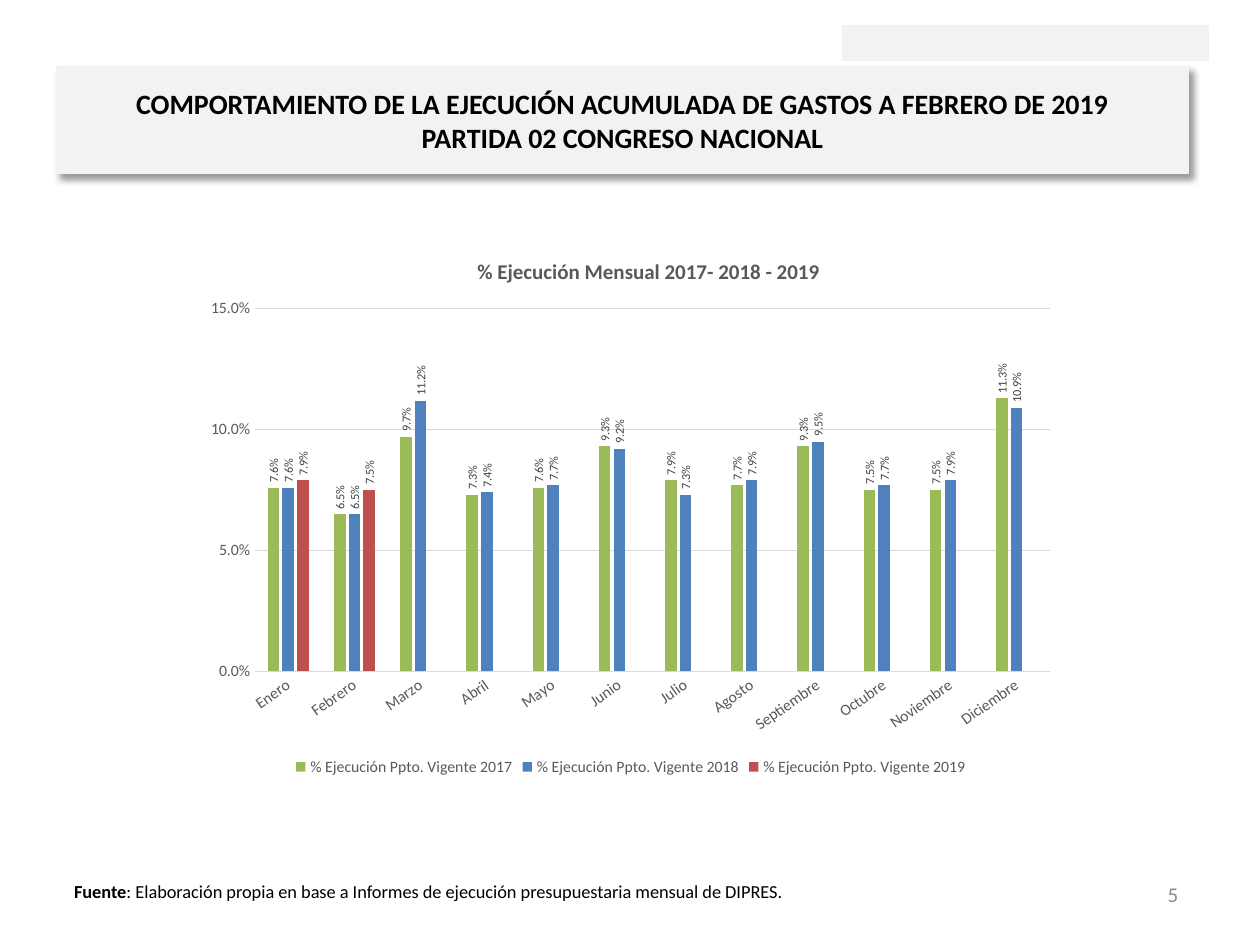
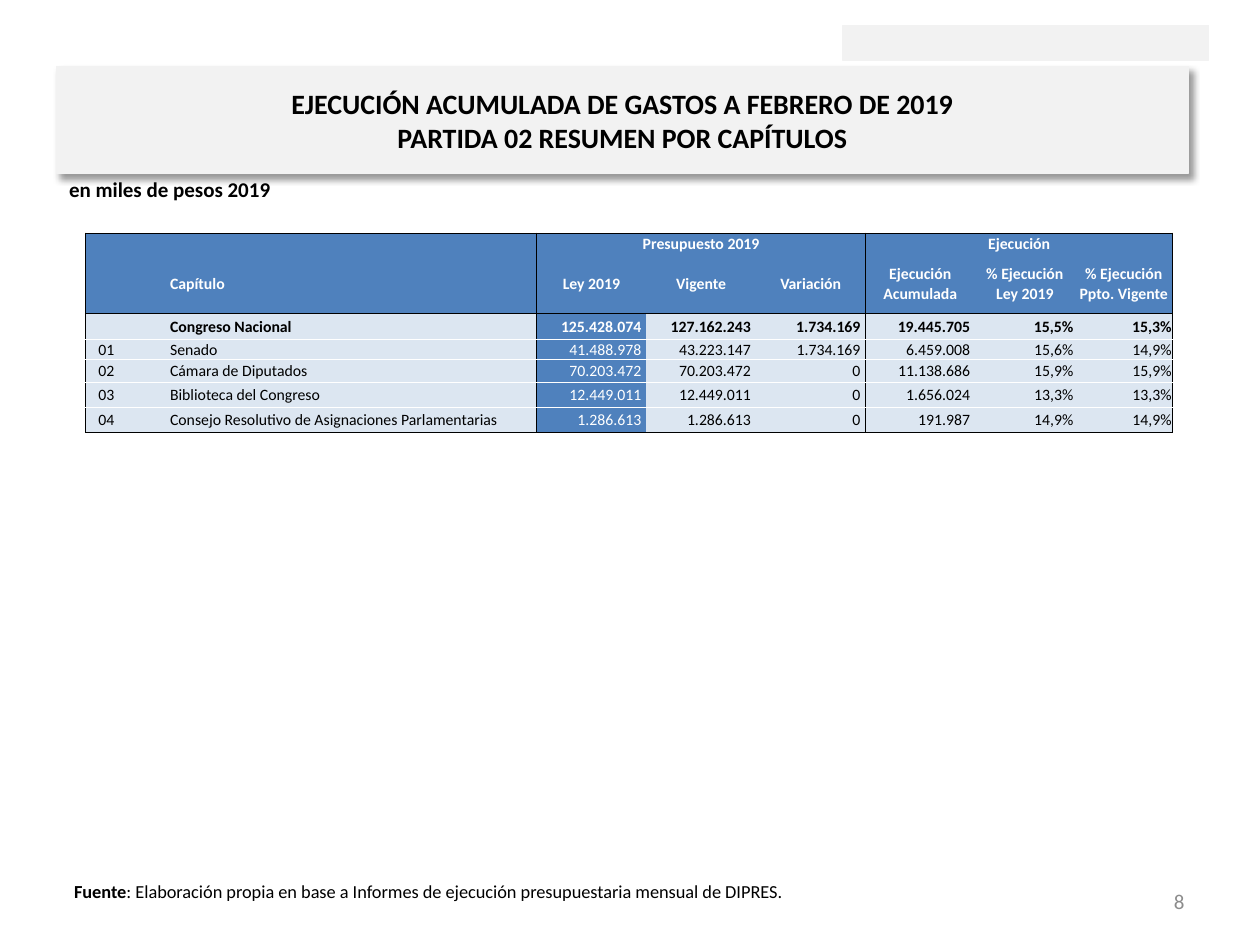
"""Build the two budget execution slides: monthly chart and chapter table."""
from lxml.etree import SubElement as Sub
from pptx import Presentation
from pptx.chart.data import CategoryChartData as ChartData
from pptx.dml.color import RGBColor
from pptx.enum.chart import XL_CHART_TYPE as Kind, XL_LABEL_POSITION as Spot
from pptx.enum.chart import XL_LEGEND_POSITION as Side, XL_TICK_MARK as Tick
from pptx.enum.shapes import MSO_SHAPE as Shape
from pptx.enum.text import MSO_ANCHOR as Anchor, PP_ALIGN as Align
from pptx.oxml import parse_xml
from pptx.oxml.ns import nsdecls, qn
from pptx.util import Inches, Pt

FONT = "Calibri"
BLACK, WHITE, GREY, RULE = "000000", "FFFFFF", "595959", "D9D9D9"
BAND, BLUE, PALE, PAGE = "F2F2F2", "4F81BD", "DCE6F1", "8C8C8C"

SOURCE = ("Fuente", ": Elaboración propia en base a Informes de ejecución "
          "presupuestaria mensual de DIPRES.")

TREND = ("COMPORTAMIENTO DE LA EJECUCIÓN ACUMULADA DE GASTOS A FEBRERO DE 2019",
         "PARTIDA 02 CONGRESO NACIONAL")
TITLE = "% Ejecución Mensual 2017- 2018 - 2019"
MONTHS = ["Enero", "Febrero", "Marzo", "Abril", "Mayo", "Junio", "Julio",
          "Agosto", "Septiembre", "Octubre", "Noviembre", "Diciembre"]
YEARS = [
    (2017, "9BBB59", [.076, .065, .097, .073, .076, .093, .079, .077, .093, .075, .075, .113]),
    (2018, BLUE, [.076, .065, .112, .074, .077, .092, .073, .079, .095, .077, .079, .109]),
    (2019, "C0504D", [.079, .075]),
]

RECAP = ("EJECUCIÓN ACUMULADA DE GASTOS A FEBRERO DE 2019",
         "PARTIDA 02 RESUMEN POR CAPÍTULOS")
UNITS = "en miles de pesos 2019"
WIDTHS = [.33, .33, 2.92, .87, .87, .87, .87, .79, .78]
HEIGHTS = [.16, .48, .2, .16, .18, .2, .2]
ROWS = [
    ("", "", "", "Presupuesto 2019", "", "", "Ejecución", "", ""),
    ("", "", "Capítulo", "Ley 2019", "Vigente", "Variación",
     "Ejecución Acumulada", "% Ejecución Ley 2019", "% Ejecución Ppto. Vigente"),
    ("", "", "Congreso Nacional", "125.428.074", "127.162.243", "1.734.169",
     "19.445.705", "15,5%", "15,3%"),
    ("01", "", "Senado", "41.488.978", "43.223.147", "1.734.169",
     "6.459.008", "15,6%", "14,9%"),
    ("02", "", "Cámara de Diputados", "70.203.472", "70.203.472", "0",
     "11.138.686", "15,9%", "15,9%"),
    ("03", "", "Biblioteca del Congreso", "12.449.011", "12.449.011", "0",
     "1.656.024", "13,3%", "13,3%"),
    ("04", "", "Consejo Resolutivo de Asignaciones Parlamentarias", "1.286.613",
     "1.286.613", "0", "191.987", "14,9%", "14,9%"),
]


def rgb(code):
    return RGBColor.from_string(code)


def style(font, size, color=BLACK, bold=False):
    font.name, font.size, font.bold = FONT, Pt(size), bold
    font.color.rgb = rgb(color)


def paint(part, color):
    part.fill.solid()
    part.fill.fore_color.rgb = rgb(color)


def stroke(line, color):
    line.color.rgb = rgb(color)
    line.width = Pt(.75)


def box(slide, area, text="", size=12, color=BLACK, bold=False, align=Align.LEFT,
        anchor=Anchor.TOP):
    frame = slide.shapes.add_textbox(*map(Inches, area)).text_frame
    frame.word_wrap, frame.vertical_anchor = True, anchor
    par = frame.paragraphs[0]
    par.alignment = align
    if text:
        par.text = text
        style(par.font, size, color, bold)
    return par


def block(slide, area):
    shape = slide.shapes.add_shape(Shape.RECTANGLE, *map(Inches, area))
    paint(shape, BAND)
    stroke(shape.line, BAND)
    shape.shadow.inherit = False
    return shape


def banner(slide, lines):
    band = block(slide, (.45, .53, 8.98, .85))
    glow = Sub(band.element.spPr.find(qn("a:effectLst")), qn("a:outerShdw"),
               blurRad=str(Pt(4)), dist=str(Pt(3)), dir="2700000", algn="tl", rotWithShape="0")
    Sub(Sub(glow, qn("a:srgbClr"), val=BLACK), qn("a:alpha"), val="40000")
    frame = band.text_frame
    frame.word_wrap, frame.vertical_anchor = True, Anchor.MIDDLE
    par = frame.paragraphs[0]
    par.alignment = Align.CENTER
    par.add_run().text = lines[0]
    par.add_line_break()
    par.add_run().text = lines[1]
    style(par.font, 16, BLACK, True)


def start(deck, lines, page, spot):
    slide = deck.slides.add_slide(deck.slide_layouts[6])
    block(slide, (6.69, .2, 2.9, .28))
    banner(slide, lines)
    foot = box(slide, (.49, 6.94, 9, .4))
    for text, bold in zip(SOURCE, (True, False)):
        run = foot.add_run()
        run.text = text
        style(run.font, 10.5, BLACK, bold)
    box(slide, (*spot, 2.33, .4), page, 12, PAGE, align=Align.RIGHT, anchor=Anchor.MIDDLE)
    return slide


def place(node, index, target, **spots):
    for old in node.findall(qn("c:layout")):
        node.remove(old)
    inner = '<c:layoutTarget val="inner"/>' if target else ""
    modes = "".join(f'<c:{k}Mode val="edge"/>' for k in "xy")
    vals = "".join(f'<c:{k} val="{v}"/>' for k, v in spots.items())
    node.insert(index, parse_xml(
        f'<c:layout {nsdecls("c")}><c:manualLayout>{inner}{modes}{vals}'
        '</c:manualLayout></c:layout>'))


def draw_chart(slide):
    data = ChartData(number_format="0.0%")
    data.categories = MONTHS
    for year, _, vals in YEARS:
        data.add_series(f"% Ejecución Ppto. Vigente {year}",
                        vals + [None] * (len(MONTHS) - len(vals)))
    chart = slide.shapes.add_chart(
        Kind.COLUMN_CLUSTERED, *map(Inches, (1.54, 1.84, 6.93, 4.36)), data).chart
    style(chart.font, 10)
    chart.has_title = True
    head = chart.chart_title.text_frame
    head.text = TITLE
    style(head.paragraphs[0].runs[0].font, 12, GREY, True)
    chart.has_legend = True
    chart.legend.position, chart.legend.include_in_layout = Side.BOTTOM, False
    style(chart.legend.font, 9, GREY)

    for axis in (chart.category_axis, chart.value_axis):
        axis.major_tick_mark = axis.minor_tick_mark = Tick.NONE
        style(axis.tick_labels.font, 9, GREY)
    stroke(chart.category_axis.format.line, RULE)
    axis = chart.value_axis
    axis.minimum_scale, axis.maximum_scale, axis.major_unit = 0, .15, .05
    axis.format.line.fill.background()
    stroke(axis.major_gridlines.format.line, RULE)
    axis.tick_labels.number_format = "0.0%"
    axis.tick_labels.number_format_is_linked = False

    plot = chart.plots[0]
    plot.gap_width, plot.overlap, plot.vary_by_categories = 219, -27, False
    for series, (_, color, _) in zip(plot.series, YEARS):
        paint(series.format, color)
        tags = series.data_labels
        tags.show_value, tags.position = True, Spot.OUTSIDE_END
        tags.number_format, tags.number_format_is_linked = "0.0%", False
        style(tags.font, 7, "404040")
    for owner, angle in (("dLbls", -90), ("catAx", -35)):
        for body in chart.element.xpath(f".//c:{owner}/c:txPr/a:bodyPr"):
            body.set("rot", str(angle * 60000))
            body.set("vert", "horz")
    place(chart.element.xpath("c:chart/c:title")[0], 1, False, x=.32, y=.04)
    place(chart.element.xpath("c:chart/c:plotArea")[0], 0, True, x=.07, y=.14, w=.91, h=.66)


def edge(cell, side, color):
    line = Sub(cell._tc.get_or_add_tcPr(), qn(f"a:ln{side}"), w=str(Pt(.5)))
    if color:
        Sub(Sub(line, qn("a:solidFill")), qn("a:srgbClr"), val=color)
    else:
        Sub(line, qn("a:noFill"))


def frame_cell(cell, row, col):
    last = len(ROWS) - 1
    merged = row == 0 and col in (3, 6)
    edge(cell, "L", BLACK if col % 3 == 0 else None)
    edge(cell, "R", BLACK if col % 3 == 2 or merged else None)
    edge(cell, "T", BLACK if row in (0, 2) else WHITE if row > 2 else None)
    edge(cell, "B", BLACK if row in (1, last) else WHITE if row > 1 else None)


def fill_cell(cell, row, col, text):
    head = row < 2
    dark = head or col == 3
    frame_cell(cell, row, col)
    paint(cell, BLUE if dark else PALE)
    cell.margin_left = cell.margin_top = cell.margin_right = Inches(.01)
    cell.margin_bottom = 0
    cell.vertical_anchor = Anchor.BOTTOM if row == 0 else Anchor.MIDDLE
    par = cell.text_frame.paragraphs[0]
    par.text = text
    if col == 2:
        par.alignment = Align.LEFT
    elif head or col == 0:
        par.alignment = Align.CENTER
    else:
        par.alignment = Align.RIGHT
        if col < 7:
            cell.margin_right = Inches(.04)
    style(par.font, 9, WHITE if dark else BLACK, row < 3)
    Sub(par._p, qn("a:endParaRPr"), sz="900")


def draw_table(slide):
    area = (.68, 1.85, sum(WIDTHS), sum(HEIGHTS))
    table = slide.shapes.add_table(len(ROWS), len(WIDTHS), *map(Inches, area)).table
    table.first_row = table.horz_banding = False
    for col, width in zip(table.columns, WIDTHS):
        col.width = Inches(width)
    for r, (line, height) in enumerate(zip(ROWS, HEIGHTS)):
        table.rows[r].height = Inches(height)
        for c, text in enumerate(line):
            fill_cell(table.cell(r, c), r, c, text)
    for c in (3, 6):
        table.cell(0, c).merge(table.cell(0, c + 2))


def main():
    deck = Presentation()
    deck.slide_width, deck.slide_height = Inches(10), Inches(7.5)
    draw_chart(start(deck, TREND, "5", (7.12, 6.9)))
    slide = start(deck, RECAP, "8", (7.17, 6.95))
    box(slide, (.45, 1.35, 9, .43), UNITS, 12, BLACK, True)
    draw_table(slide)
    deck.save("out.pptx")


if __name__ == "__main__":
    main()
